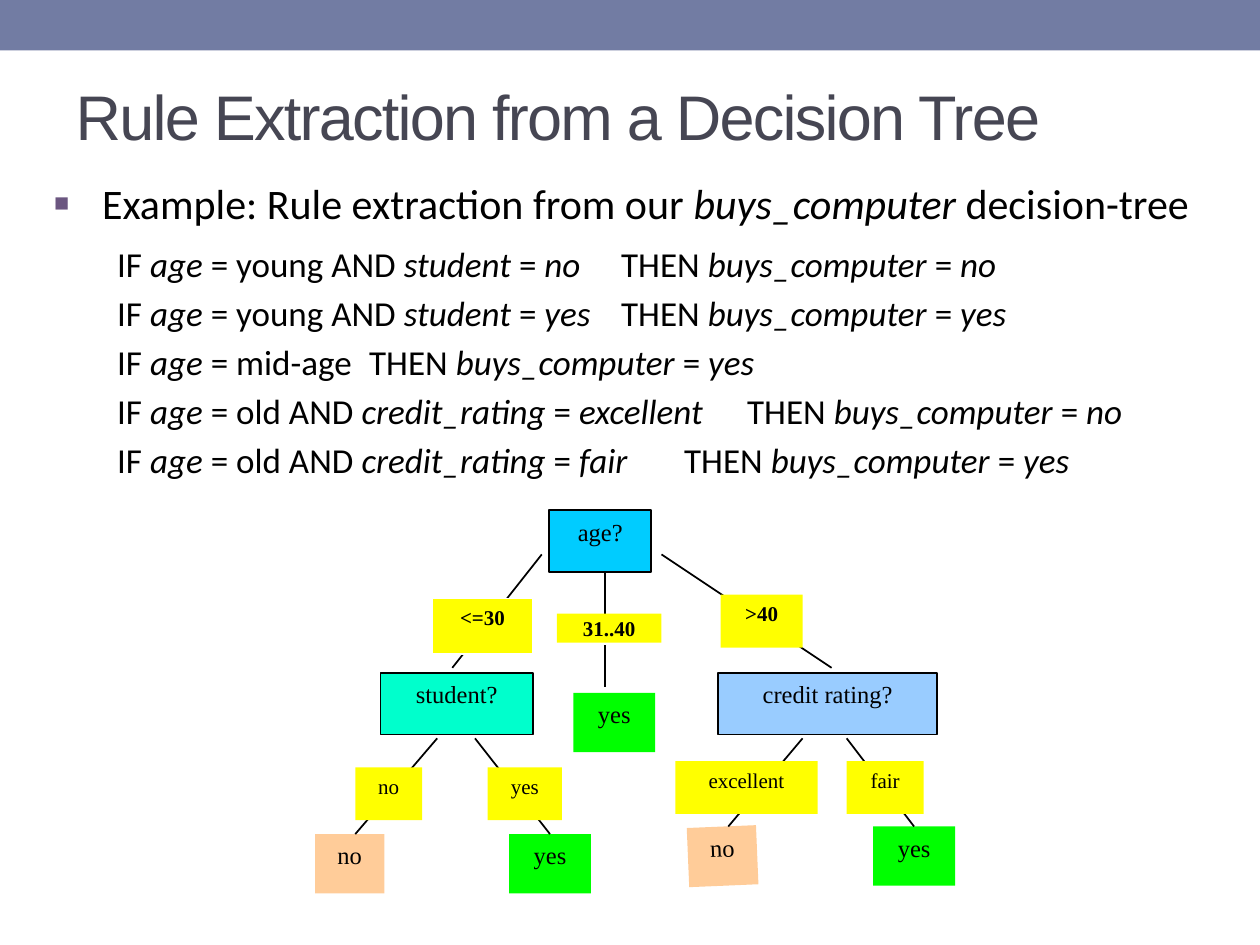
from lxml import etree
from pptx import Presentation
from pptx.dml.color import RGBColor
from pptx.enum.shapes import MSO_CONNECTOR, MSO_SHAPE
from pptx.enum.text import MSO_ANCHOR, MSO_AUTO_SIZE, PP_ALIGN
from pptx.oxml.ns import qn
from pptx.util import Inches, Pt

RECTANGLE = MSO_SHAPE.RECTANGLE
STRAIGHT = MSO_CONNECTOR.STRAIGHT
TOP, MIDDLE = MSO_ANCHOR.TOP, MSO_ANCHOR.MIDDLE
LEFT, CENTER = PP_ALIGN.LEFT, PP_ALIGN.CENTER
NO_FIT = MSO_AUTO_SIZE.NONE

BLACK = RGBColor(0x00, 0x00, 0x00)
WHITE = RGBColor(0xFF, 0xFF, 0xFF)
BAND = RGBColor(0x72, 0x7C, 0xA3)
TITLE_INK = RGBColor(0x46, 0x46, 0x53)
SKY = RGBColor(0x00, 0xCC, 0xFF)
TEAL = RGBColor(0x00, 0xFF, 0xCC)
PALE_BLUE = RGBColor(0x99, 0xCC, 0xFF)
YELLOW = RGBColor(0xFF, 0xFF, 0x00)
GREEN = RGBColor(0x00, 0xFF, 0x00)
PEACH = RGBColor(0xFF, 0xCC, 0x99)
BULLET_HEX = "6B5680"

# Asterisks enclose italic words
INTRO = "Example: Rule extraction from our *buys_computer* decision-tree"
RULES = [
    ("*age* = young AND *student* = *no*", "no"),
    ("*age* = young AND *student* = *yes*", "yes"),
    ("*age* = mid-age", "yes"),
    ("*age* = old AND *credit_rating* = *excellent*", "no"),
    ("*age* = old AND *credit_rating* = *fair*", "yes"),
]
RULE_TABS = (0.5, 5.27)  # IF column and THEN column

# Tests of the tree: text, left, top, width, fill
TESTS = [
    ("age?", 4.36, 4.05, 0.81, SKY),
    ("student?", 3.02, 5.34, 1.21, TEAL),
    ("credit rating?", 5.7, 5.34, 1.74, PALE_BLUE),
]
# Leaves: text, left, top, rotation
LEAVES = [
    ("no", 2.5, 6.62, 0),
    ("yes", 4.04, 6.62, 0),
    ("yes", 6.93, 6.56, 0),
    ("yes", 4.55, 5.5, 0),
    ("no", 5.46, 6.56, -2.4),
]
LEAF_LOOK = {"no": (0.55, PEACH), "yes": (0.65, GREEN)}
# Branches: start x, start y, end x, end y, index of the leaf joined at its top
BRANCHES = [
    (4.3, 4.4, 3.59, 5.3, None),
    (4.8, 4.55, 4.8, 4.88, None),
    (4.8, 5.12, 4.8, 5.45, None),
    (5.25, 4.4, 6.6, 5.3, None),
    (3.47, 5.86, 2.82, 6.62, None),
    (3.77, 5.86, 4.36, 6.62, 1),
    (6.37, 5.86, 5.78, 6.56, None),
    (6.72, 5.86, 7.26, 6.56, 2),
]
# Branch labels: text, left, top, width, height, bold, outline, anchor
LABELS = [
    ("<=30", 3.43, 4.75, 0.8, 0.44, True, WHITE, TOP),
    (">40", 5.72, 4.72, 0.65, 0.42, True, None, TOP),
    ("31..40", 4.42, 4.87, 0.83, 0.23, True, None, MIDDLE),
    ("fair", 6.72, 6.04, 0.61, 0.42, False, None, TOP),
    ("excellent", 5.36, 6.04, 1.13, 0.42, False, None, TOP),
    ("yes", 3.87, 6.09, 0.59, 0.42, False, None, TOP),
    ("no", 2.82, 6.09, 0.53, 0.42, False, None, TOP),
]


def style(font, name, size, color):
    font.name, font.size = name, Pt(size)
    font.color.rgb = color


def place(shape, left, top, width, height):
    shape.left, shape.top = Inches(left), Inches(top)
    shape.width, shape.height = Inches(width), Inches(height)


def add_box(page, left, top, width, height, fill, outline=None):
    box = page.shapes.add_shape(
        RECTANGLE, Inches(left), Inches(top), Inches(width), Inches(height))
    box.shadow.inherit = False
    box.fill.solid()
    box.fill.fore_color.rgb = fill
    if outline is None:
        box.line.fill.background()
    else:
        box.line.color.rgb = outline
        box.line.width = Pt(1)
    return box


def write_box(box, text, size, bold=False, anchor=TOP):
    frame = box.text_frame
    frame.text = text
    frame.word_wrap = False
    frame.vertical_anchor = anchor
    para = frame.paragraphs[0]
    para.alignment = CENTER
    style(para.runs[0].font, "Times New Roman", size, BLACK)
    para.runs[0].font.bold = bold


def add_branch(page, x1, y1, x2, y2, leaf):
    branch = page.shapes.add_connector(
        STRAIGHT, Inches(x1), Inches(y1), Inches(x2), Inches(y2))
    branch.line.color.rgb = BLACK
    branch.line.width = Pt(1)
    etree.SubElement(branch.element.spPr, qn("a:effectLst"))
    if leaf is not None:
        branch.end_connect(leaf, 0)


def write_para(para, marked, size, before):
    para.alignment = LEFT
    para.line_spacing = 1.0
    para.space_before, para.space_after = Pt(before), Pt(0)
    for index, piece in enumerate(marked.split("*")):
        if piece:
            span = para.add_run()
            span.text = piece
            style(span.font, "Calibri", size, BLACK)
            span.font.italic = index % 2 == 1


def set_bullet(para):
    props = para._p.get_or_add_pPr()
    props.set("marL", str(Inches(0.38)))
    props.set("indent", str(-Inches(0.38)))
    color = etree.SubElement(props, qn("a:buClr"))
    etree.SubElement(color, qn("a:srgbClr"), val=BULLET_HEX)
    etree.SubElement(props, qn("a:buSzPct"), val="60000")
    etree.SubElement(props, qn("a:buFont"), typeface="Arial")
    etree.SubElement(props, qn("a:buChar"), char="■")


def set_columns(para):
    props = para._p.get_or_add_pPr()
    props.set("marL", "0")
    props.set("indent", "0")
    etree.SubElement(props, qn("a:buNone"))
    tabs = etree.SubElement(props, qn("a:tabLst"))
    for position in RULE_TABS:
        etree.SubElement(tabs, qn("a:tab"), pos=str(Inches(position)), algn="l")


def write_title(title):
    place(title, 0.5, 0.44, 9, 0.95)
    frame = title.text_frame
    frame.text = "Rule Extraction from a Decision Tree"
    frame.auto_size = NO_FIT
    frame.vertical_anchor = MIDDLE
    para = frame.paragraphs[0]
    para.alignment = LEFT
    style(para.runs[0].font, "Arial", 36, TITLE_INK)
    para.runs[0]._r.get_or_add_rPr().set("spc", "-100")


def write_rules(body):
    place(body, 0.33, 1.36, 9.58, 2.49)
    frame = body.text_frame
    frame.auto_size = NO_FIT
    frame.vertical_anchor = TOP
    intro = frame.paragraphs[0]
    write_para(intro, INTRO, 24, 4.8)
    set_bullet(intro)
    for index, (condition, answer) in enumerate(RULES):
        para = frame.add_paragraph()
        para.level = 1
        rule = f"\tIF {condition}\tTHEN *buys_computer* = *{answer}*"
        write_para(para, rule, 20, 4 if index else 8)
        set_columns(para)


def draw_tree(page):
    for text, left, top, width, fill in TESTS:
        write_box(add_box(page, left, top, width, 0.49, fill, BLACK), text, 14)
    leaves = []
    for text, left, top, rotation in LEAVES:
        width, fill = LEAF_LOOK[text]
        leaf = add_box(page, left, top, width, 0.47, fill)
        leaf.rotation = rotation
        write_box(leaf, text, 14)
        leaves.append(leaf)
    for *ends, joined in BRANCHES:
        add_branch(page, *ends, None if joined is None else leaves[joined])
    # Labels lie over the branches
    for text, left, top, width, height, bold, outline, anchor in LABELS:
        label = add_box(page, left, top, width, height, YELLOW, outline)
        write_box(label, text, 12, bold, anchor)


def main():
    deck = Presentation()
    deck.slide_width, deck.slide_height = Inches(10), Inches(7.5)
    page = deck.slides.add_slide(deck.slide_layouts[1])
    add_box(page, 0, 0, 10, 0.4, BAND)
    write_title(page.shapes.title)
    write_rules(page.placeholders[1])
    draw_tree(page)
    deck.save("out.pptx")


if __name__ == "__main__":
    main()
